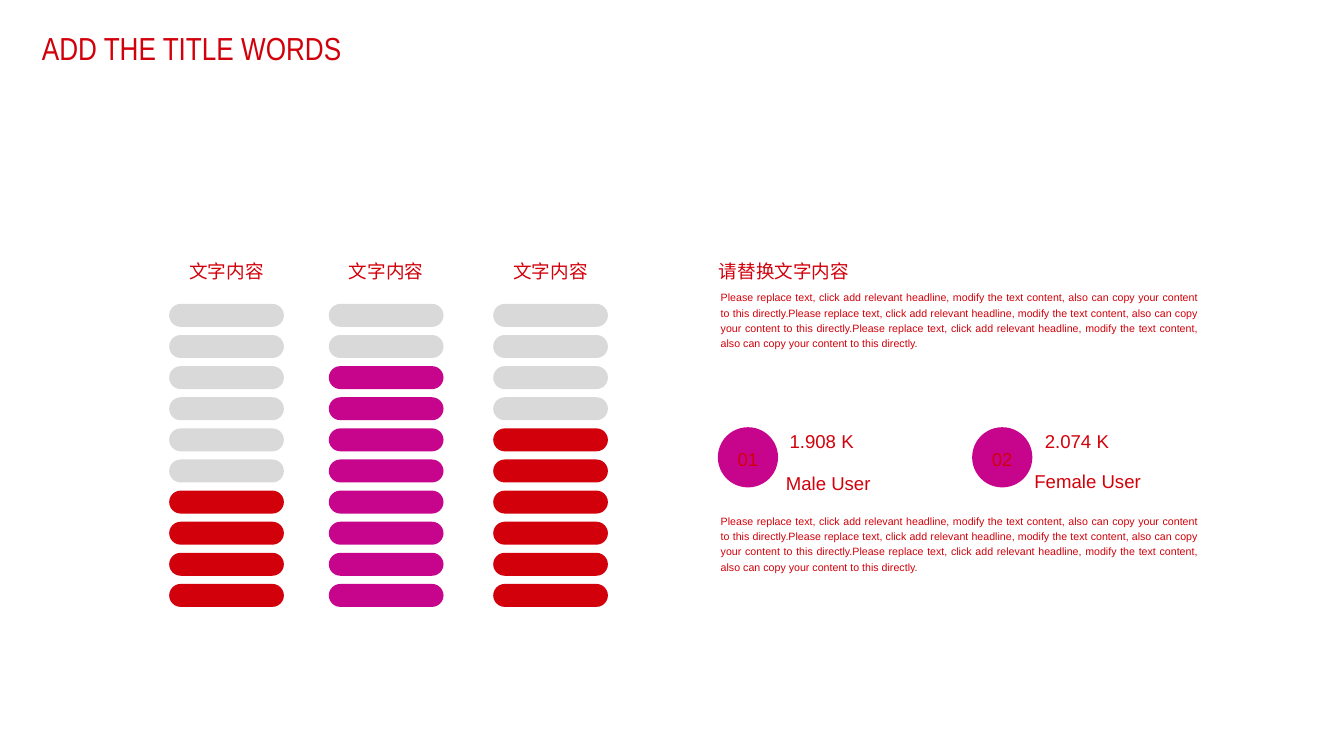
from pptx import Presentation
from pptx import util as u
from pptx.dml.color import RGBColor
from pptx.enum import shapes, text

COLORS = {"red": "D1000A", "magenta": "C7058C", "grey": "D9D9D9"}
BODY = "Please replace text, click add relevant headline, modify the text content, also can copy your content to this directly." * 3
BAR_COUNT = 10


def write_text(shape, words, size=14, font="Arial", align=text.PP_ALIGN.JUSTIFY,
               spacing=1.2, wrap=True, insets=(0, 0), anchor=text.MSO_ANCHOR.TOP):
    """Put one formatted paragraph into a shape."""
    frame = shape.text_frame
    frame.word_wrap = wrap
    frame.vertical_anchor = anchor
    frame.margin_left = frame.margin_right = u.Inches(insets[0])
    frame.margin_top = frame.margin_bottom = u.Inches(insets[1])
    paragraph = frame.paragraphs[0]
    paragraph.alignment = align
    paragraph.line_spacing = spacing
    run = paragraph.add_run()
    run.text = words
    run.font.size = u.Pt(size)
    run.font.name = font
    run.font.color.rgb = RGBColor.from_string(COLORS["red"])


def add_text(slide, box, words, **style):
    """Add a text box at left, top, width, height in inches."""
    shape = slide.shapes.add_textbox(*map(u.Inches, box))
    write_text(shape, words, **style)


def add_filled(slide, kind, box, color):
    """Add a flat shape without an outline."""
    shape = slide.shapes.add_shape(kind, *map(u.Inches, box))
    shape.shadow.inherit = False
    shape.fill.solid()
    shape.fill.fore_color.rgb = RGBColor.from_string(COLORS[color])
    shape.line.fill.background()
    return shape


def add_title(slide, box):
    """Write the slide title."""
    add_text(slide, box, "ADD THE TITLE WORDS", size=24, font="Arial Narrow",
             align=text.PP_ALIGN.LEFT, spacing=1.5, insets=(0.1, 0.05))


def add_bar_column(slide, box, filled, color):
    """Draw a labelled stack of pills with the lowest ones coloured."""
    left, top, width, height = box
    add_text(slide, (left + 0.06, top, width - 0.12, 0.24), "文字内容",
             align=text.PP_ALIGN.CENTER, spacing=1.0)
    bar_height, label_height = 0.24, 0.46
    pitch = (height - label_height - bar_height) / (BAR_COUNT - 1)
    for row in range(BAR_COUNT):
        bar_top = top + label_height + row * pitch
        bar_color = color if row >= BAR_COUNT - filled else "grey"
        bar = add_filled(slide, shapes.MSO_SHAPE.ROUNDED_RECTANGLE,
                         (left, bar_top, width, bar_height), bar_color)
        bar.adjustments[0] = 0.5


def add_user_figure(slide, box, number, value, value_offset, name, name_offset):
    """Draw a numbered circle with a value and a name beside it."""
    left, top, width, height = box
    circle = add_filled(slide, shapes.MSO_SHAPE.OVAL, (left, top, height, height), "magenta")
    write_text(circle, number, align=text.PP_ALIGN.CENTER, anchor=text.MSO_ANCHOR.MIDDLE)
    for words, (right, down) in ((value, value_offset), (name, name_offset)):
        add_text(slide, (left + right, top + down, width - right, 0.28), words, wrap=False)


def add_description(slide, box):
    """Write the heading, both paragraphs and the user figures."""
    left, top, width, height = box
    add_text(slide, (left, top, 4.48, 0.26), "请替换文字内容")
    for body_top in (top + 0.35, top + height - 0.65):
        add_text(slide, (left + 0.02, body_top, width - 0.02, 0.65), BODY, size=8)
    figure_top = top + 1.8
    add_user_figure(slide, (left - 0.01, figure_top, 1.6, 0.63), "01",
                    "1.908 K", (0.75, -0.02), "Male User", (0.71, 0.42))
    add_user_figure(slide, (left + 2.65, figure_top, 1.77, 0.63), "02",
                    "2.074 K", (0.76, -0.02), "Female User", (0.65, 0.4))


def main():
    """Build and save the slide."""
    presentation = Presentation()
    presentation.slide_width = u.Inches(14.06)
    presentation.slide_height = u.Inches(7.91)
    slide = presentation.slides.add_slide(presentation.slide_layouts[6])
    add_title(slide, (0.34, 0.05, 3.54, 0.63))
    for left, filled, color in ((1.77, 4, "red"), (3.44, 8, "magenta"), (5.16, 6, "red")):
        add_bar_column(slide, (left, 2.72, 1.2, 3.63), filled, color)
    add_description(slide, (7.52, 2.67, 5.02, 3.34))
    presentation.save("out.pptx")


if __name__ == "__main__":
    main()
